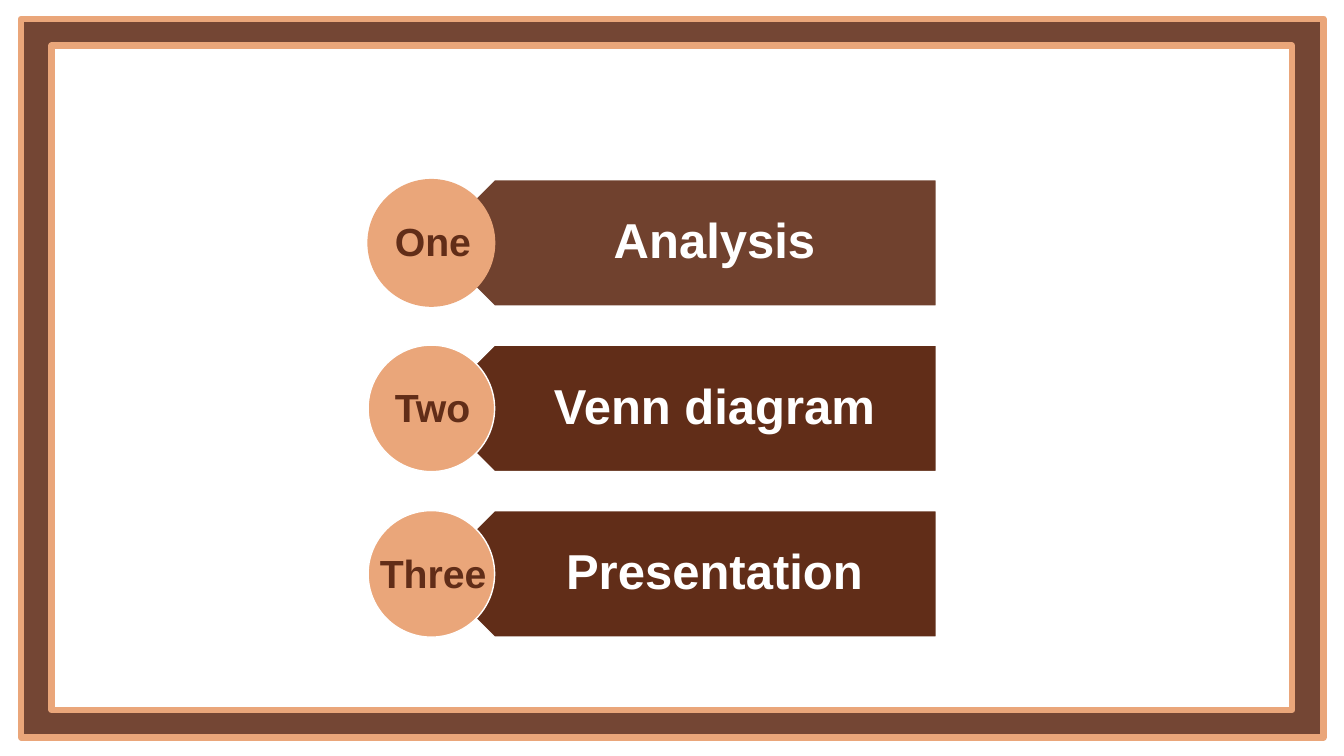
from lxml.etree import SubElement
from pptx import Presentation
from pptx.dml.color import RGBColor
from pptx.enum.shapes import MSO_SHAPE
from pptx.enum.text import MSO_ANCHOR, MSO_AUTO_SIZE, PP_ALIGN
from pptx.oxml.ns import qn
from pptx.util import Pt

BROWN = RGBColor(0x61, 0x2D, 0x18)
PEACH = RGBColor(0xEA, 0xA6, 0x7A)
WHITE = RGBColor(0xFF, 0xFF, 0xFF)

# number, left and width of the number, title, banner opacity in percent, circle outline
AGENDA = [
    ("One", 275, 85, "Analysis", 90, PEACH),
    ("Two", 275, 85, "Venn diagram", 100, WHITE),
    ("Three", 264.2, 107.3, "Presentation", 100, WHITE),
]

# left, top, width, height, fill, opacity in percent
FRAMES = [
    (15.1, 13.4, 930.2, 513.4, BROWN, 88),
    (36.7, 32.6, 886.3, 474.5, WHITE, 100),
]

ROW_TOP, ROW_PITCH, ROW_HEIGHT = 128.3, 118.2, 90.4
CIRCLE_LEFT = 262.9
BANNER_LEFT, BANNER_RIGHT = 308.1, 668.9
TITLE_LEFT = 331.2
NUMBER_TOP, NUMBER_PITCH, NUMBER_HEIGHT = 151.4, 118.6, 41

presentation = Presentation()
presentation.slide_width, presentation.slide_height = Pt(960), Pt(540)
slide = presentation.slides.add_slide(presentation.slide_layouts[6])
slide.background.fill.solid()
slide.background.fill.fore_color.rgb = WHITE


def add_figure(kind, box, fill, line, line_width, opacity=100):
    shape = slide.shapes.add_shape(kind, *map(Pt, box))
    shape.shadow.inherit = False
    shape.fill.solid()
    shape.fill.fore_color.rgb = fill
    shape.line.color.rgb = line
    shape.line.width = Pt(line_width)
    if opacity < 100:
        color = shape.fill._xPr.find(qn("a:solidFill"))[0]
        SubElement(color, qn("a:alpha")).set("val", str(opacity * 1000))
    return shape


def add_label(text, box, size, color):
    label = slide.shapes.add_textbox(*map(Pt, box))
    frame = label.text_frame
    frame.word_wrap = True
    frame.text = text
    paragraph = frame.paragraphs[0]
    font = paragraph.font
    font.name, font.size, font.bold = "Arial", Pt(size), True
    font.color.rgb = color
    return frame, paragraph


for *box, fill, opacity in FRAMES:
    add_figure(MSO_SHAPE.RECTANGLE, box, fill, PEACH, 4.5, opacity)

for index, (number, number_left, number_width, title, opacity, outline) in enumerate(AGENDA):
    top = ROW_TOP + index * ROW_PITCH
    banner = add_figure(
        MSO_SHAPE.PENTAGON,
        (BANNER_LEFT, top, BANNER_RIGHT - BANNER_LEFT, ROW_HEIGHT),
        BROWN, WHITE, 1, opacity)
    banner.rotation = 180

    frame, paragraph = add_label(
        title, (TITLE_LEFT, top, BANNER_RIGHT - TITLE_LEFT, ROW_HEIGHT), 35, WHITE)
    frame.vertical_anchor = MSO_ANCHOR.MIDDLE
    frame.margin_left, frame.margin_right = Pt(40), Pt(19.2)
    frame.margin_top = frame.margin_bottom = Pt(10.5)
    paragraph.alignment = PP_ALIGN.CENTER
    paragraph.line_spacing = 0.9

    add_figure(MSO_SHAPE.OVAL, (CIRCLE_LEFT, top, ROW_HEIGHT, ROW_HEIGHT), PEACH, outline, 1)

    frame, paragraph = add_label(
        number,
        (number_left, NUMBER_TOP + index * NUMBER_PITCH, number_width, NUMBER_HEIGHT),
        28, BROWN)
    frame.auto_size = MSO_AUTO_SIZE.SHAPE_TO_FIT_TEXT

presentation.save("out.pptx")
